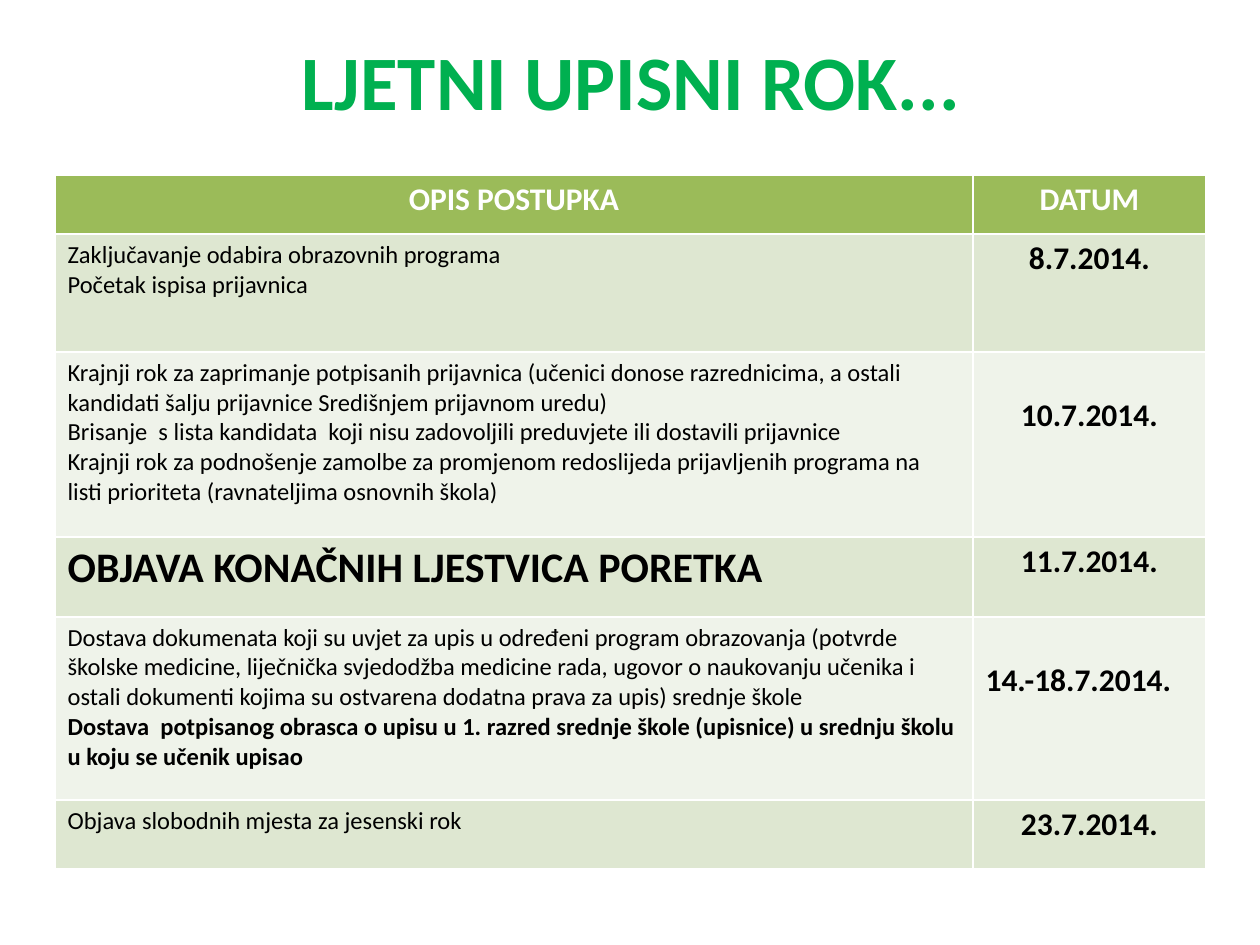
from pptx import Presentation
from pptx.dml.color import RGBColor
from pptx.enum.text import MSO_ANCHOR, PP_ALIGN
from pptx.util import Pt

PX = 914400 // 126  # EMU per px
FONT = "Calibri"
TITLE_GREEN = RGBColor(0x00, 0xB0, 0x50)
HEADER_GREEN = RGBColor(0x9B, 0xBB, 0x59)
BANDS = RGBColor(0xDE, 0xE7, 0xD1), RGBColor(0xEF, 0xF3, 0xEA)
WHITE = RGBColor(0xFF, 0xFF, 0xFF)
BLACK = RGBColor(0x00, 0x00, 0x00)
LEFT, CENTER = PP_ALIGN.LEFT, PP_ALIGN.CENTER

# Content
TITLE = "LJETNI UPISNI ROK..."
HEADERS = "OPIS POSTUPKA", "DATUM"
# Each step: row height, [(description, size, bold)], date, date alignment, date top margin
STEPS = [
    (118, [("Zaključavanje odabira obrazovnih programa", 14, False),
           ("Početak ispisa prijavnica", 14, False)],
     "8.7.2014.", CENTER, 6),
    (185, [("Krajnji rok za zaprimanje potpisanih prijavnica (učenici donose razrednicima, "
            "a ostali kandidati šalju prijavnice Središnjem prijavnom uredu)", 14, False),
           ("Brisanje  s lista kandidata  koji nisu zadovoljili preduvjete "
            "ili dostavili prijavnice", 14, False),
           ("Krajnji rok za podnošenje zamolbe za promjenom redoslijeda prijavljenih "
            "programa na listi prioriteta (ravnateljima osnovnih škola)", 14, False)],
     "10.7.2014.", CENTER, 45),
    (80, [("OBJAVA KONAČNIH LJESTVICA PORETKA", 24, True)],
     "11.7.2014.", CENTER, 6),
    (183, [("Dostava dokumenata koji su uvjet za upis u određeni program obrazovanja (potvrde "
            "školske medicine, liječnička svjedodžba medicine rada, ugovor o naukovanju učenika "
            "i ostali dokumenti kojima su ostvarena dodatna prava za upis) srednje škole", 14, False),
           ("Dostava  potpisanog obrasca o upisu u 1. razred srednje škole (upisnice) "
            "u srednju školu u koju se učenik upisao", 14, True)],
     "14.-18.7.2014.", LEFT, 45),
    (69, [("Objava slobodnih mjesta za jesenski rok", 14, False)],
     "23.7.2014.", CENTER, 6),
]

# Layout in px
TITLE_BOX = 64, 1, 1134, 158
TABLE_LEFT, TABLE_TOP = 55, 175
COLUMN_WIDTHS = 918, 233
ROW_HEIGHTS = [59] + [step[0] for step in STEPS]


def write(frame, lines, color, align):
    """Put (text, size, bold) lines into a frame, one paragraph each."""
    frame.text = "\n".join(text for text, _, _ in lines)
    for paragraph, (_, size, bold) in zip(frame.paragraphs, lines):
        paragraph.alignment = align
        font = paragraph.runs[0].font
        font.name, font.size, font.bold = FONT, Pt(size), bold
        font.color.rgb = color


def fill_cell(cell, lines, fill, color, align, top=6):
    cell.fill.solid()
    cell.fill.fore_color.rgb = fill
    cell.margin_top = top * PX
    write(cell.text_frame, lines, color, align)


prs = Presentation()
prs.slide_width, prs.slide_height = 1260 * PX, 945 * PX
slide = prs.slides.add_slide(prs.slide_layouts[5])

# Title
title = slide.shapes.title
title.left, title.top, title.width, title.height = (n * PX for n in TITLE_BOX)
title.text_frame.vertical_anchor = MSO_ANCHOR.MIDDLE
write(title.text_frame, [(TITLE, 44, True)], TITLE_GREEN, CENTER)

# Schedule grid
schedule = slide.shapes.add_table(
    len(ROW_HEIGHTS), len(COLUMN_WIDTHS), TABLE_LEFT * PX, TABLE_TOP * PX,
    sum(COLUMN_WIDTHS) * PX, sum(ROW_HEIGHTS) * PX).table
for column, width in zip(schedule.columns, COLUMN_WIDTHS):
    column.width = width * PX
for row, height in zip(schedule.rows, ROW_HEIGHTS):
    row.height = height * PX

# Header row, then one banded row per step
for i, header in enumerate(HEADERS):
    fill_cell(schedule.cell(0, i), [(header, 18, True)], HEADER_GREEN, WHITE, CENTER)
for i, (_, description, date, date_align, date_top) in enumerate(STEPS):
    band = BANDS[i % 2]
    fill_cell(schedule.cell(i + 1, 0), description, band, BLACK, LEFT)
    fill_cell(schedule.cell(i + 1, 1), [(date, 18, True)], band, BLACK, date_align, date_top)

prs.save("out.pptx")
